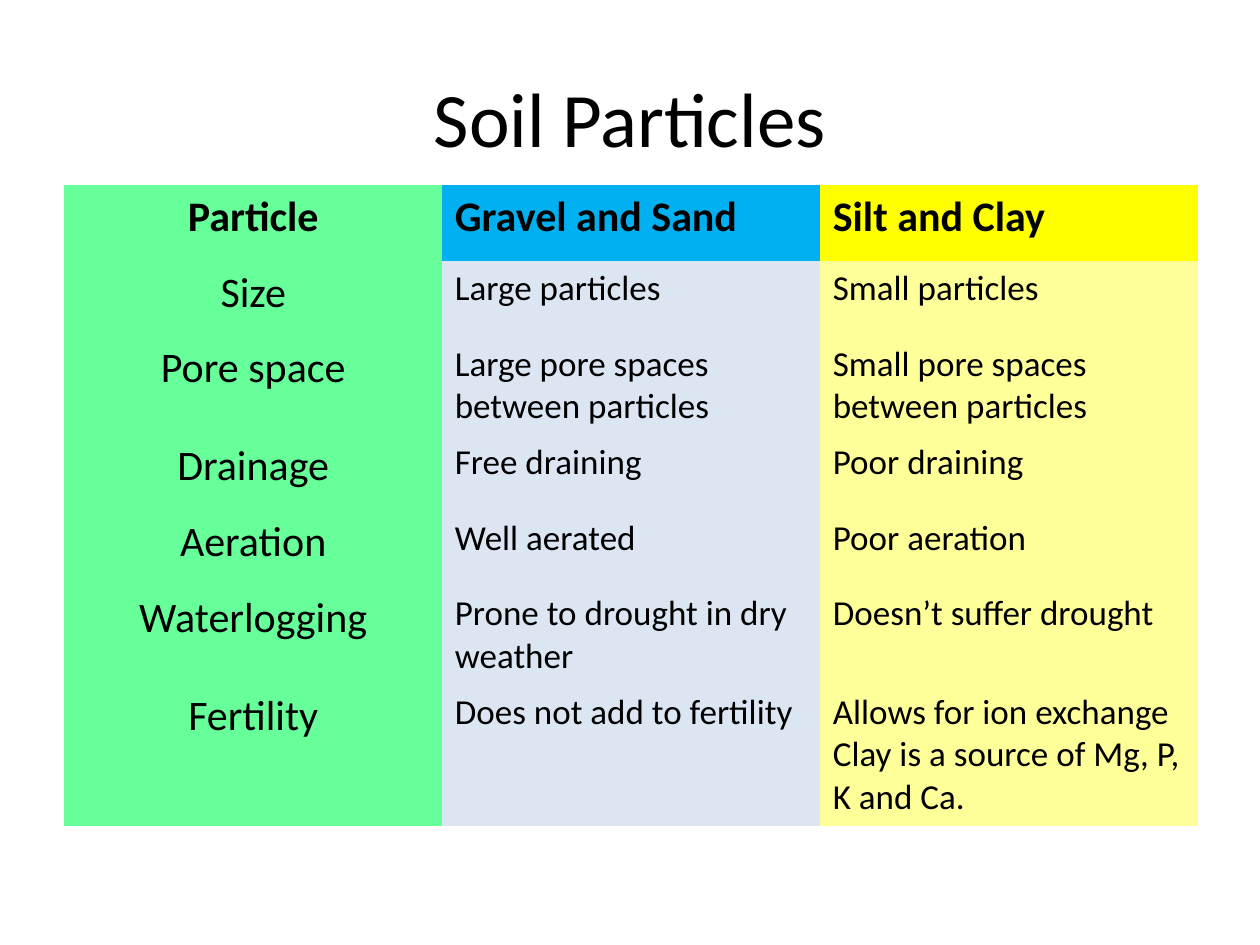
import pptx
import pptx.dml.color
import pptx.enum.text
import pptx.oxml.ns
import pptx.util

Inches = pptx.util.Inches
align = pptx.enum.text.PP_ALIGN
colors = {
    "text": "000000",
    "particle": "66FF99",
    "sand_header": "00B0F0",
    "sand": "DCE6F2",
    "clay_header": "FFFF00",
    "clay": "FFFF99",
}
header_fills = ["particle", "sand_header", "clay_header"]
body_fills = ["particle", "sand", "clay"]
rows = [
    ["Particle", "Gravel and Sand", "Silt and Clay"],
    ["Size", "Large particles", "Small particles"],
    ["Pore space", "Large pore spaces between particles", "Small pore spaces between particles"],
    ["Drainage", "Free draining", "Poor draining"],
    ["Aeration", "Well aerated", "Poor aeration"],
    ["Waterlogging", "Prone to drought in dry weather", "Doesn’t suffer drought"],
    ["Fertility", "Does not add to fertility",
     "Allows for ion exchange\nClay is a source of Mg, P, K and Ca."],
]


def format_paragraph(paragraph, size, bold, alignment):
    paragraph.alignment = alignment
    values = {"name": "Calibri", "size": pptx.util.Pt(size), "bold": bold}
    for name, value in values.items():
        setattr(paragraph.font, name, value)
    paragraph.font.color.rgb = pptx.dml.color.RGBColor.from_string(colors["text"])


presentation = pptx.Presentation()
presentation.slide_width = Inches(10)
presentation.slide_height = Inches(7.5)
slide = presentation.slides.add_slide(presentation.slide_layouts[5])

title = slide.shapes.title
title_box = {"left": 0.5, "top": 0.3, "width": 9, "height": 1.25}
for name, value in title_box.items():
    setattr(title, name, Inches(value))
title.text_frame.text = "Soil Particles"
title.text_frame.vertical_anchor = pptx.enum.text.MSO_ANCHOR.MIDDLE
format_paragraph(title.text_frame.paragraphs[0], 44, False, align.CENTER)

table = slide.shapes.add_table(
    len(rows), 3, Inches(0.51), Inches(1.47), Inches(9), Inches(0.6 * len(rows))
).table
no_grid_style = "{2D5ABB26-0587-4C30-8999-92F81FD0307C}"
table._tbl.tblPr.find(pptx.oxml.ns.qn("a:tableStyleId")).text = no_grid_style

for row_index, row in enumerate(rows):
    is_header = row_index == 0
    fills = header_fills if is_header else body_fills
    for column_index, text in enumerate(row):
        is_label = column_index == 0
        cell = table.cell(row_index, column_index)
        cell.fill.solid()
        cell.fill.fore_color.rgb = pptx.dml.color.RGBColor.from_string(colors[fills[column_index]])
        cell.text_frame.text = text
        size = 24 if is_header or is_label else 20
        alignment = align.CENTER if is_label else align.LEFT
        for paragraph in cell.text_frame.paragraphs:
            format_paragraph(paragraph, size, is_header, alignment)

presentation.save("out.pptx")
